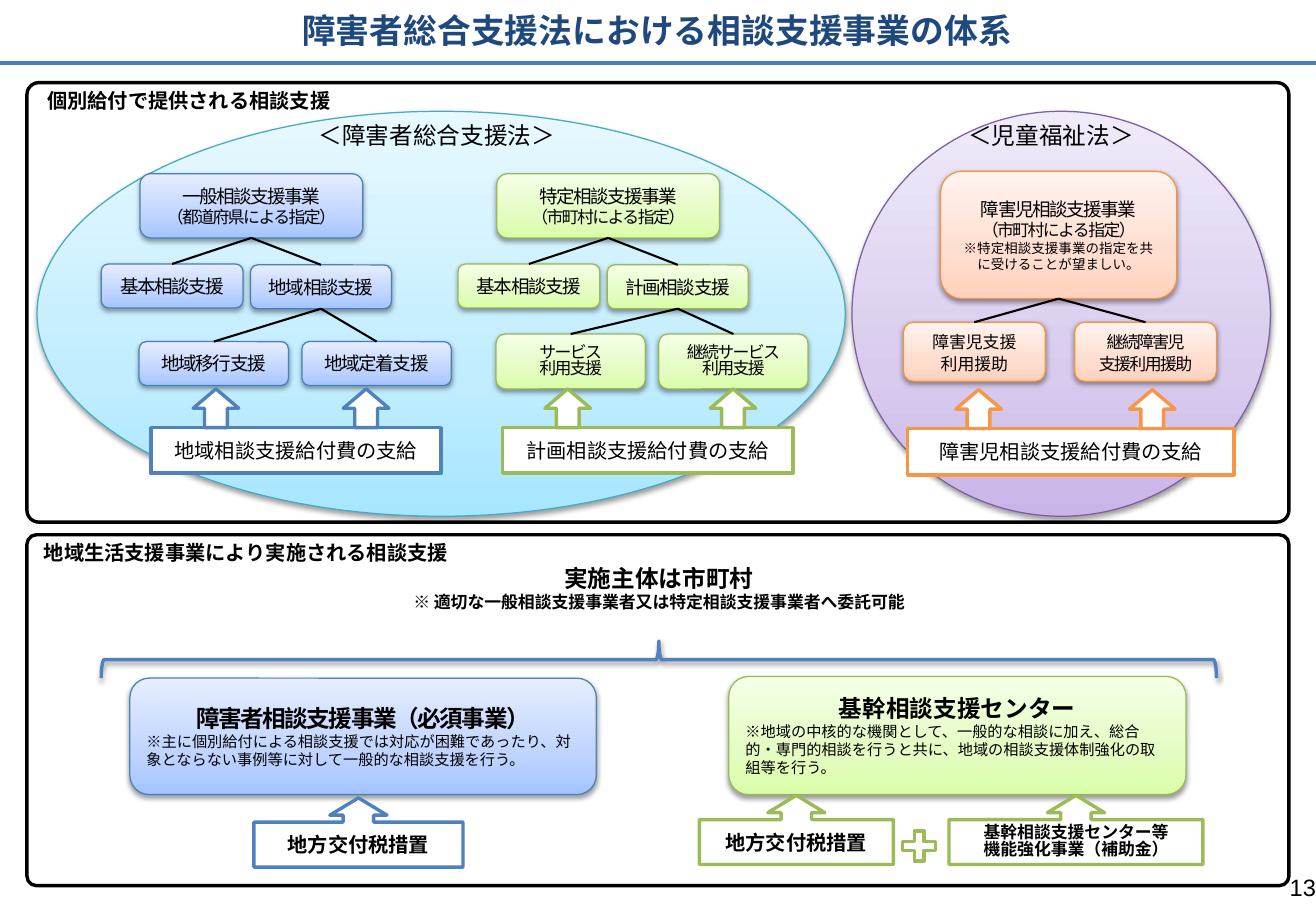
from typing import NamedTuple

from pptx import Presentation
from pptx.dml.color import RGBColor as RGB
from pptx.enum.shapes import MSO_CONNECTOR as LINK, MSO_SHAPE as KIND
from pptx.enum.text import MSO_ANCHOR as ANCHOR, PP_ALIGN as ALIGN
from pptx.oxml.ns import qn
from pptx.util import Pt
from lxml.etree import SubElement as Sub


class Tone(NamedTuple):
    """Gradient colours from bottom to top, thin edge and strong edge."""
    fades: tuple
    edge: str
    bold: str


class Theme:
    face, latin = "Noto Sans CJK JP", "Arial"
    ink, paper, navy, rule = "000000", "FFFFFF", "1F497D", "4B7EBC"
    title, head, name, item, note, fine = 20, 14, 12, 11, 10, 9
    tiny, tight = 8, -0.9
    blue = Tone(("A4C4FF", "BFD4FF", "E6EEFF"), "4B7EBC", "4F81BD")
    green = Tone(("DAFDA7", "E4FCC2", "F5FFE7"), "98B955", "9BBB59")
    coral = Tone(("FFD2BD", "FFDED0", "FFF2ED"), "F69240", "F79646")
    aqua = Tone(("A7E6FF", "C1EDFF", "E7F8FF"), "46AAC5", "46AAC5")
    plum = Tone(("C9B5E8", "D8CBEE", "F0EAF9"), "7D60A0", "7D60A0")


class Row(NamedTuple):
    text: str
    size: float
    bold: bool = False
    gap: float = 0
    align: int = ALIGN.CENTER
    color: str = Theme.ink
    face: str = Theme.face


def write(shape, rows, lead=1.2, pad=(0, 0), anchor=ANCHOR.MIDDLE):
    """Fill a shape with rows; lead is the line pitch in ems when there are several."""
    frame = shape.text_frame
    frame.word_wrap = True
    frame.vertical_anchor = anchor
    frame.margin_left = frame.margin_right = Pt(pad[0])
    frame.margin_top = frame.margin_bottom = Pt(pad[1])
    for i, row in enumerate(rows):
        para = frame.add_paragraph() if i else frame.paragraphs[0]
        para.alignment = row.align
        if len(rows) > 1:
            para.line_spacing = Pt(row.size * lead)
        run = para.add_run()
        run.text = row.text
        font = run.font
        font.name, font.size, font.bold = row.face, Pt(row.size), row.bold
        font.color.rgb = RGB.from_string(row.color)
        props = run._r.get_or_add_rPr()
        if row.gap:
            props.set("spc", str(int(row.gap * 100)))
        Sub(props, qn("a:ea")).set("typeface", Theme.face)


def label(slide, box, *rows):
    text = slide.shapes.add_textbox(*map(Pt, box))
    write(text, rows, anchor=ANCHOR.TOP)


def draw(slide, kind, box, edge, width=2, fill=Theme.paper, adjust=()):
    shape = slide.shapes.add_shape(kind, *map(Pt, box))
    shape.shadow.inherit = False
    shape.line.color.rgb = RGB.from_string(edge)
    shape.line.width = Pt(width)
    if fill:
        shape.fill.solid()
        shape.fill.fore_color.rgb = RGB.from_string(fill)
    else:
        shape.fill.background()
    for i, value in enumerate(adjust):
        shape.adjustments[i] = value
    return shape


def shade(shape):
    """Cast a soft shadow straight down."""
    list_ = shape._element.spPr.find(qn("a:effectLst"))
    cast = Sub(list_, qn("a:outerShdw"), blurRad=str(Pt(3.1)), dist=str(Pt(1.6)),
               dir="5400000", rotWithShape="0")
    color = Sub(cast, qn("a:srgbClr"), val=Theme.ink)
    Sub(color, qn("a:alpha"), val="38000")


def glow(slide, kind, box, tone):
    """Draw a shape with a three-step gradient and a shadow."""
    shape = draw(slide, kind, box, tone.edge, 0.75)
    shape.fill.gradient()
    shape.fill.gradient_angle = 90
    stops = shape._element.spPr.find(qn("a:gradFill")).find(qn("a:gsLst"))
    for stop in list(stops):
        stops.remove(stop)
    for place, color in zip((0, 35, 100), tone.fades):
        stop = Sub(stops, qn("a:gs"), pos=str(place * 1000))
        Sub(stop, qn("a:srgbClr"), val=color)
    shade(shape)
    return shape


def card(slide, box, tone, *rows, lead=1.2):
    shape = glow(slide, KIND.ROUNDED_RECTANGLE, box, tone)
    write(shape, rows, lead, (6.5, 3.6))
    return shape


def rule(slide, ends, color, width):
    line = slide.shapes.add_connector(LINK.STRAIGHT, *map(Pt, ends))
    line.line.color.rgb = RGB.from_string(color)
    line.line.width = Pt(width)
    Sub(line._element.spPr, qn("a:effectLst"))
    return line


def join(slide, top, *kids):
    for kid in kids:
        line = rule(slide, (0, 0, 0, 0), Theme.ink, 1.25)
        line.begin_connect(top, 2)
        line.end_connect(kid, 0)


def grant(slide, box, tone, text, arrows):
    """Draw a payment box with arrows that rise from its top edge."""
    shape = draw(slide, KIND.RECTANGLE, box, tone.bold)
    write(shape, [Row(text, Theme.name)])
    for x in arrows:
        draw(slide, KIND.UP_ARROW, (x, box[1] - 23, 27, 23), tone.bold)


def callout(slide, box, tone, *rows):
    shape = draw(slide, KIND.UP_ARROW_CALLOUT, box, tone.bold,
                 adjust=(0.44, 0.413, 0.25, 0.65))
    write(shape, rows, lead=1)


def tree(slide, x, tone, head, by, mid, leaves, leaf):
    """Draw an adult service tree; leaf holds top, height and type size."""
    top, high, size = leaf

    def rows(text, size=Theme.item):
        return [Row(part, size, gap=Theme.tight) for part in text.split("\n")]

    root = card(slide, (x, 103, 132, 38), tone, *rows(head), *rows(by, Theme.note))
    base = card(slide, (x - 23, 156.5, 84, 26), tone, *rows("基本相談支援"))
    plan = card(slide, (x + 65.5, 157, 83.5, 26), tone, *rows(mid))
    ends = [card(slide, (x - 0.5 + 96.5 * i, top, 88.5, high), tone,
                 *rows(text, size), lead=1) for i, text in enumerate(leaves)]
    join(slide, root, base, plan)
    join(slide, plan, *ends)


def child(slide):
    t = Theme
    root = card(slide, (557.5, 101.5, 140, 75.5), t.coral,
                Row("障害児相談支援事業", t.item, gap=t.tight),
                Row("（市町村による指定）", t.note, gap=t.tight),
                Row("※特定相談支援事業の指定を共に受けることが望ましい。", t.tiny))
    kids = [card(slide, (x, 191, 84, 35), t.coral,
                 *[Row(text, t.note, gap=gap) for text in texts], lead=1.3)
            for x, gap, texts in ((535.5, 0, ("障害児支援", "利用援助")),
                                  (637, t.tight, ("継続障害児", "支援利用援助")))]
    join(slide, root, *kids)
    grant(slide, (538, 254, 193.5, 27.5), t.coral, "障害児相談支援給付費の支給",
          (566.5, 669.5))


def benefits(slide):
    t = Theme
    glow(slide, KIND.OVAL, (505, 66, 248, 240), t.plum)
    glow(slide, KIND.OVAL, (22, 66, 479, 240), t.aqua)
    label(slide, (170, 71.5, 178, 22), Row("＜障害者総合支援法＞", t.head))
    label(slide, (561, 71.5, 124, 22), Row("＜児童福祉法＞", t.head))
    tree(slide, 83, t.blue, "一般相談支援事業", "（都道府県による指定）",
         "地域相談支援", ("地域移行支援", "地域定着支援"), (202.5, 26, t.item))
    tree(slide, 294.5, t.green, "特定相談支援事業", "（市町村による指定）",
         "計画相談支援", ("サービス\n利用支援", "継続サービス\n利用支援"),
         (198, 32.5, t.note))
    child(slide)
    grant(slide, (89.5, 253.5, 172, 27), t.blue, "地域相談支援給付費の支給",
          (114.5, 203.5))
    grant(slide, (298, 253.5, 172, 27), t.green, "計画相談支援給付費の支給",
          (323, 421))


def local(slide):
    t = Theme
    label(slide, (157, 334, 467, 30),
          Row("実施主体は市町村", t.head, True, face=t.latin),
          Row("※ 適切な一般相談支援事業者又は特定相談支援事業者へ委託可能",
              t.note, True, face=t.latin))
    brace = draw(slide, KIND.LEFT_BRACE, (379.5, 60.5, 22, 661), t.blue.bold, fill=None)
    brace.rotation = 90
    shade(brace)
    card(slide, (77, 402, 276.5, 69), t.blue,
         Row("障害者相談支援事業（必須事業）", t.head, True, t.tight),
         Row("※主に個別給付による相談支援では対応が困難であったり、対象とならない"
             "事例等に対して一般的な相談支援を行う。", t.fine, align=ALIGN.LEFT))
    card(slide, (432, 401, 271, 70), t.green,
         Row("基幹相談支援センター", t.head, True),
         Row("※地域の中核的な機関として、一般的な相談に加え、総合的・専門的相談を"
             "行うと共に、地域の相談支援体制強化の取組等を行う。",
             t.fine, align=ALIGN.LEFT))
    tax = Row("地方交付税措置", t.name, True)
    callout(slide, (150.5, 473, 124, 41), t.blue, tax)
    callout(slide, (414.5, 471.5, 115, 41), t.green, tax)
    callout(slide, (562.5, 471.5, 150.5, 41), t.green,
            Row("基幹相談支援センター等", t.note, True),
            Row("機能強化事業（補助金）", t.note, True))
    draw(slide, KIND.MATH_PLUS, (531.5, 489.5, 26.5, 24), t.green.bold)


def panel(slide, top, high, left, text):
    draw(slide, KIND.ROUNDED_RECTANGLE, (16, top, 748, high), Theme.ink, adjust=(0.027,))
    label(slide, (left, top + 3.5, 280, 20),
          Row(text, Theme.name, True, align=ALIGN.LEFT))


def heading(slide, text):
    title = slide.shapes.title
    title.left, title.top, title.width, title.height = map(Pt, (14.5, 3, 750, 29.5))
    write(title, [Row(text, Theme.title, True, color=Theme.navy, face=Theme.latin)])
    rule(slide, (0, 37.5, 780, 37.5), Theme.rule, 2.25)


def main():
    deck = Presentation()
    deck.slide_width, deck.slide_height = Pt(780), Pt(540)
    slide = deck.slides.add_slide(deck.slide_layouts[5])
    heading(slide, "障害者総合支援法における相談支援事業の体系")
    panel(slide, 49, 260.5, 28, "個別給付で提供される相談支援")
    benefits(slide)
    panel(slide, 317, 208, 26, "地域生活支援事業により実施される相談支援")
    local(slide)
    label(slide, (740, 517.5, 40, 20),
          Row("13", Theme.head, align=ALIGN.RIGHT, face=Theme.latin))
    deck.save("out.pptx")


if __name__ == "__main__":
    main()
